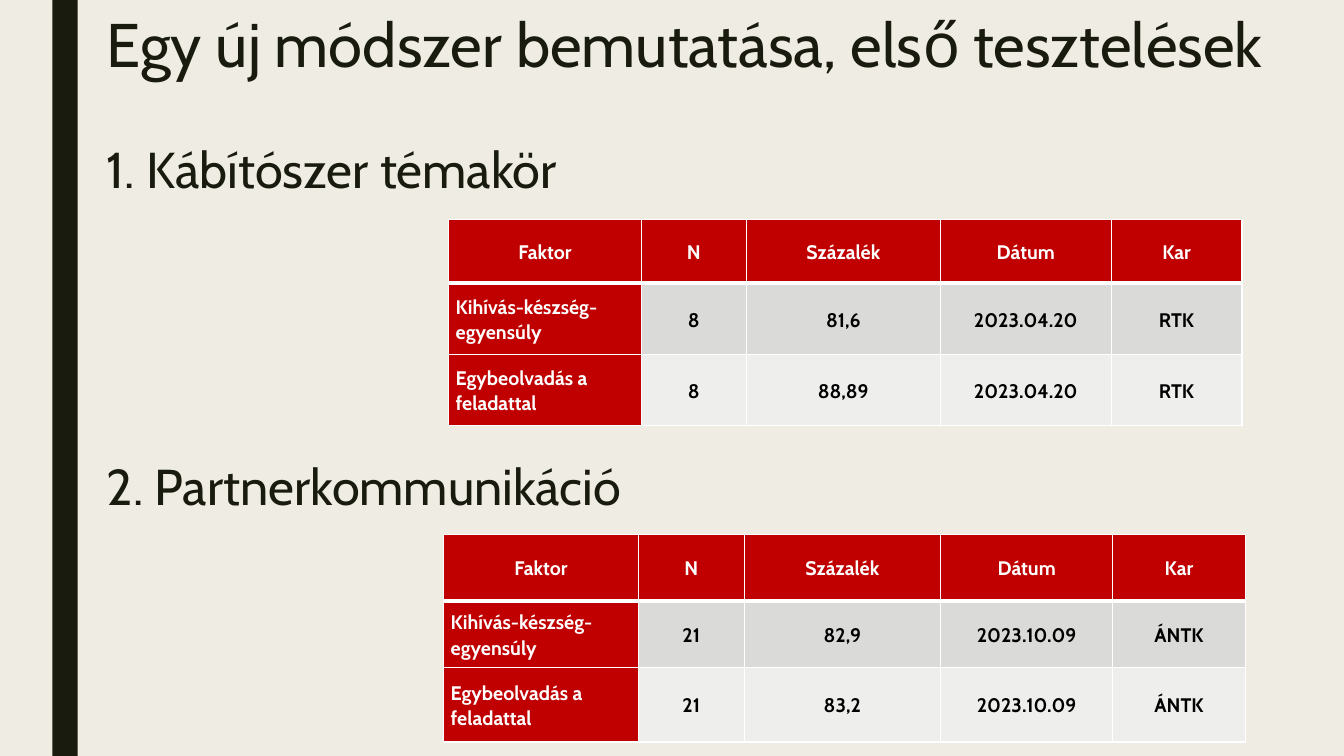
from dataclasses import dataclass

import pptx
import pptx.dml.color
import pptx.enum.shapes
import pptx.enum.text
import pptx.oxml.ns
import pptx.util
from lxml import etree

ALIGN = pptx.enum.text.PP_ALIGN
ANCHOR = pptx.enum.text.MSO_ANCHOR


@dataclass(frozen=True)
class Theme:
    font: str = "Cabin"
    background: str = "EFEDE3"
    ink: str = "191B0E"
    accent: str = "C00000"
    bands: tuple = ("DADBD9", "EEEEED")
    white: str = "FFFFFF"
    black: str = "000000"
    title_size: int = 44
    heading_size: int = 36
    table_size: int = 14
    rule: int = 1
    header_rule: int = 3


def rgb(value):
    return pptx.dml.color.RGBColor.from_string(value)


def paint(fill, color):
    fill.solid()
    fill.fore_color.rgb = rgb(color)


class Deck:
    """Draws on one slide; every length is a percentage of the slide's size."""

    def __init__(self, theme):
        self.theme = theme
        self.prs = pptx.Presentation()
        self.prs.slide_width = pptx.util.Inches(13.33)
        self.prs.slide_height = pptx.util.Inches(7.5)
        self.s = self.prs.slides.add_slide(self.prs.slide_layouts[5])
        paint(self.s.background.fill, theme.background)

    def x(self, share):
        return round(self.prs.slide_width * share / 100)

    def y(self, share):
        return round(self.prs.slide_height * share / 100)

    def box(self, left, top, width, height):
        return self.x(left), self.y(top), self.x(width), self.y(height)

    def style(self, p, size, color, bold=False):
        p.font.name = self.theme.font
        p.font.size = pptx.util.Pt(size)
        p.font.color.rgb = rgb(color)
        p.font.bold = bold

    def bar(self, *place):
        sp = self.s.shapes.add_shape(
            pptx.enum.shapes.MSO_SHAPE.RECTANGLE, *self.box(*place))
        paint(sp.fill, self.theme.ink)
        sp.line.fill.background()
        sp.shadow.inherit = False

    def title(self, place, lines):
        """Fill the title placeholder with (text, size, space before) lines."""
        sp = self.s.shapes.title
        sp.left, sp.top, sp.width, sp.height = self.box(*place)
        tf = sp.text_frame
        tf.auto_size = pptx.enum.text.MSO_AUTO_SIZE.NONE
        tf.vertical_anchor = ANCHOR.TOP
        tf.text = "\n".join(text for text, _, _ in lines)
        for p, (_, size, before) in zip(tf.paragraphs, lines):
            p.alignment = ALIGN.LEFT
            p.line_spacing = 0.89
            p.space_before = pptx.util.Pt(before)
            self.style(p, size, self.theme.ink)

    def borders(self, cell, **widths):
        tcPr = cell._tc.get_or_add_tcPr()
        for side in "LRTB":
            width = widths.get(side, self.theme.rule)
            ln = etree.SubElement(tcPr, pptx.oxml.ns.qn(f"a:ln{side}"),
                                  w=str(pptx.util.Pt(width)))
            fill = etree.SubElement(ln, pptx.oxml.ns.qn("a:solidFill"))
            etree.SubElement(fill, pptx.oxml.ns.qn("a:srgbClr"),
                             val=self.theme.white)

    def cell(self, cell, text, row, col):
        t = self.theme
        heavy = {0: {"B": t.header_rule}, 1: {"T": t.header_rule}}
        self.borders(cell, **heavy.get(row, {}))
        red = row == 0 or col == 0
        paint(cell.fill, t.accent if red else t.bands[(row - 1) % 2])
        cell.vertical_anchor = ANCHOR.MIDDLE
        cell.margin_left = cell.margin_right = pptx.util.Inches(0.07)
        cell.margin_top = pptx.util.Inches(0.01)
        cell.margin_bottom = 0
        cell.text = text
        p = cell.text_frame.paragraphs[0]
        p.alignment = ALIGN.LEFT if row and col == 0 else ALIGN.CENTER
        p.line_spacing = 1.07
        p.space_after = pptx.util.Pt(8)
        self.style(p, t.table_size, t.white if red else t.black, bold=True)

    def table(self, left, top, width, col_shares, row_heights, rows):
        place = self.box(left, top, width, sum(row_heights))
        table = self.s.shapes.add_table(len(rows), len(col_shares), *place).table
        table.horz_banding = False
        for column, share in zip(table.columns, col_shares):
            column.width = self.x(width * share)
        for i, (height, values) in enumerate(zip(row_heights, rows)):
            table.rows[i].height = self.y(height)
            for j, text in enumerate(values):
                self.cell(table.cell(i, j), text, i, j)


HEADER = ("Faktor", "N", "Százalék", "Dátum", "Kar")
FACTORS = ("Kihívás-készség-egyensúly", "Egybeolvadás a feladattal")
COL_SHARES = (0.243, 0.132, 0.245, 0.215, 0.165)


def results(n, percentages, date, faculty):
    return [HEADER] + [(factor, n, percentage, date, faculty)
                       for factor, percentage in zip(FACTORS, percentages)]


def main():
    theme = Theme()
    deck = Deck(theme)
    deck.bar(3.9, 0, 1.88, 100)
    deck.title((7.2, 1.33, 91.07, 97.07), [
        ("Egy új módszer bemutatása, első tesztelések", theme.title_size, 0),
        ("1. Kábítószer témakör", theme.heading_size, 46),
        ("2. Partnerkommunikáció", theme.heading_size, 188),
    ])
    deck.table(33.01, 70.67, 59.64, COL_SHARES, (8.8, 8.8, 9.87),
               results("21", ("82,9", "83,2"), "2023.10.09", "ÁNTK"))
    deck.table(33.38, 29.07, 59.04, COL_SHARES, (8.4, 9.4, 9.4),
               results("8", ("81,6", "88,89"), "2023.04.20", "RTK"))
    deck.prs.save("out.pptx")


if __name__ == "__main__":
    main()
